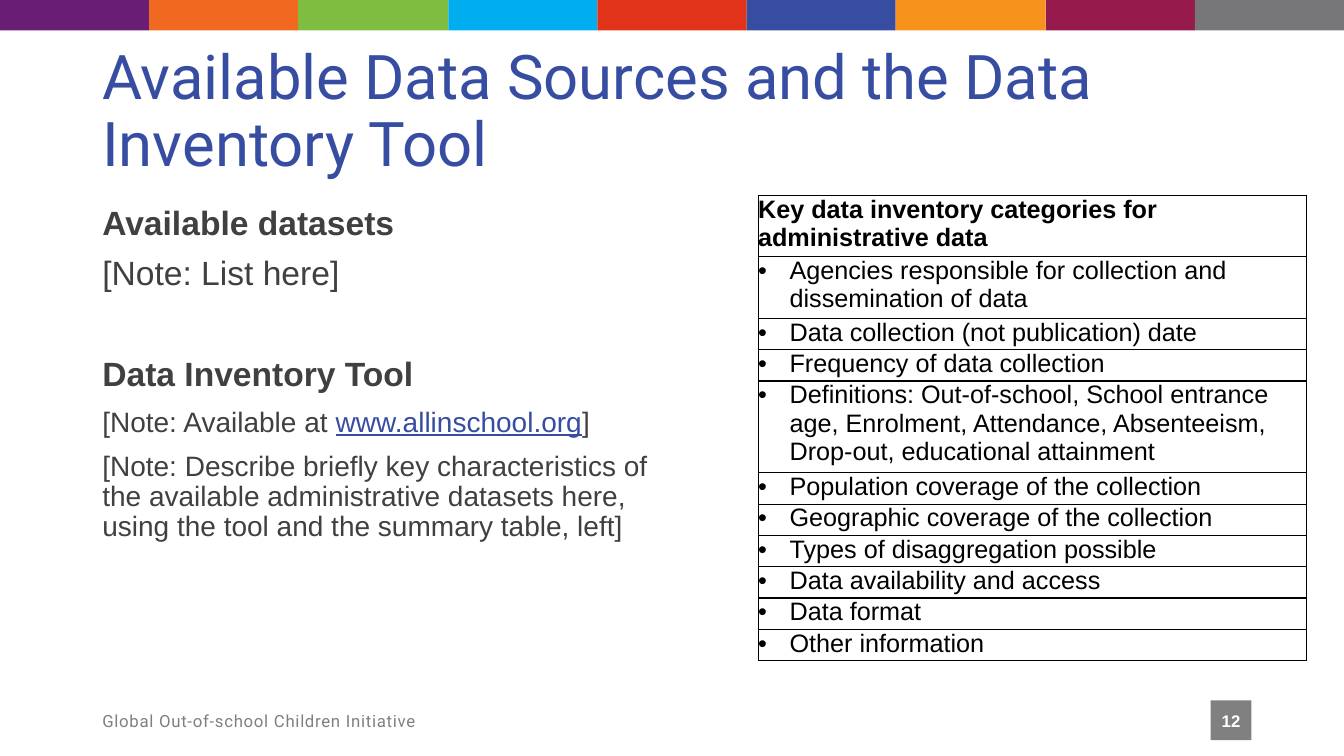
from dataclasses import dataclass
from typing import NamedTuple

from lxml import etree
from pptx import Presentation
from pptx.dml.color import RGBColor
from pptx.enum.shapes import MSO_SHAPE as Shape
from pptx.enum.text import MSO_ANCHOR as Anchor, PP_ALIGN as Align
from pptx.oxml.ns import qn
from pptx.util import Emu, Pt

EMU_PER_PX = 9525
SLIDE_WIDTH, SLIDE_HEIGHT = 1280, 720


@dataclass(frozen=True)
class Theme:
    heading_font: str = "Roboto"
    body_font: str = "Arial"
    blue: str = "364DA1"
    text: str = "404040"
    gray: str = "808080"
    black: str = "000000"
    white: str = "FFFFFF"
    band: tuple[str, ...] = ("691D74", "F16920", "7FBD41", "00AEEF", "E13319",
                             "364DA1", "F7931D", "961A4B", "77777A")
    title_size: int = 44
    heading_size: int = 24
    note_size: int = 20
    table_size: int = 18
    footer_size: int = 12


THEME = Theme()


class Box(NamedTuple):
    left: int
    top: int
    width: int
    height: int


@dataclass(frozen=True)
class Run:
    text: str
    size: int
    color: str = THEME.text
    font: str = THEME.body_font
    bold: bool = False
    underline: bool = False
    tracking: int = 0  # hundredths of a point


@dataclass(frozen=True)
class Block:
    runs: tuple[Run, ...]
    space_before: int = 0
    line_spacing: float = 0.9


class Category(NamedTuple):
    text: str
    lines: int = 1
    heading: bool = False


TITLE_BOX = Box(88, 38, 1157, 139)
BODY_BOX = Box(88, 192, 564, 457)
FOOTER_BOX = Box(88, 667, 768, 38)
NUMBER_BOX = Box(1153, 667, 39, 38)
TABLE_LEFT, TABLE_TOP, TABLE_WIDTH = 722, 186, 522
TABLE_LINE, BULLET_INDENT, BAND_HEIGHT = 28, 30, 29

TITLE = Block((Run("Available Data Sources and the Data Inventory Tool",
                   THEME.title_size, THEME.blue, THEME.heading_font),))
BODY = (
    Block((Run("Available datasets", THEME.heading_size, bold=True),)),
    Block((Run("[Note: List here]", THEME.heading_size),), 10),
    Block((Run("Data Inventory Tool", THEME.heading_size, bold=True),), 46),
    Block((Run("[Note: Available at ", THEME.note_size),
           Run("www.allinschool.org", THEME.note_size, THEME.blue, underline=True),
           Run("]", THEME.note_size)), 10),
    Block((Run("[Note: Describe briefly key characteristics of the available "
               "administrative datasets here, using the tool and the summary "
               "table, left]", THEME.note_size),), 10),
)
FOOTER = Block((Run("Global Out-of-school Children Initiative", THEME.footer_size,
                    THEME.gray, THEME.heading_font, tracking=50),), line_spacing=1.0)
NUMBER = Block((Run("12", THEME.footer_size, THEME.white, bold=True),), line_spacing=1.0)
CATEGORIES = (
    Category("Key data inventory categories for administrative data", 2, True),
    Category("Agencies responsible for collection and dissemination of data", 2),
    Category("Data collection (not publication) date"),
    Category("Frequency of data collection"),
    Category("Definitions: Out-of-school, School entrance age, Enrolment, Attendance, "
             "Absenteeism, Drop-out, educational attainment", 3),
    Category("Population coverage of the collection"),
    Category("Geographic coverage of the collection"),
    Category("Types of disaggregation possible"),
    Category("Data availability and access"),
    Category("Data format"),
    Category("Other information"),
)


def px(length: int) -> Emu:
    return Emu(length * EMU_PER_PX)


def place(box: Box) -> tuple[Emu, ...]:
    return tuple(px(length) for length in box)


def add_run(paragraph, style: Run) -> None:
    run = paragraph.add_run()
    run.text = style.text
    font = run.font
    font.name, font.size = style.font, Pt(style.size)
    font.bold, font.underline = style.bold, style.underline
    font.color.rgb = RGBColor.from_string(style.color)
    if style.tracking:
        run._r.get_or_add_rPr().set("spc", str(style.tracking))


def fill_frame(frame, blocks: tuple[Block, ...], anchor: Anchor = Anchor.TOP,
               align: Align = Align.LEFT) -> None:
    frame.word_wrap = True
    frame.vertical_anchor = anchor
    for index, block in enumerate(blocks):
        paragraph = frame.add_paragraph() if index else frame.paragraphs[0]
        paragraph.alignment = align
        paragraph.line_spacing = block.line_spacing
        if block.space_before:
            paragraph.space_before = Pt(block.space_before)
        for style in block.runs:
            add_run(paragraph, style)


def add_text(slide, box: Box, blocks: tuple[Block, ...], anchor: Anchor = Anchor.TOP) -> None:
    fill_frame(slide.shapes.add_textbox(*place(box)).text_frame, blocks, anchor)


def add_rectangle(slide, box: Box, color: str):
    shape = slide.shapes.add_shape(Shape.RECTANGLE, *place(box))
    shape.shadow.inherit = False
    shape.fill.solid()
    shape.fill.fore_color.rgb = RGBColor.from_string(color)
    shape.line.fill.background()
    return shape


def add_borders(cell, color: str) -> None:
    properties = cell._tc.get_or_add_tcPr()
    for side in ("lnL", "lnR", "lnT", "lnB"):
        line = etree.SubElement(properties, qn(f"a:{side}"), w=str(Pt(1)))
        fill = etree.SubElement(line, qn("a:solidFill"))
        etree.SubElement(fill, qn("a:srgbClr"), val=color)


def add_bullet(paragraph) -> None:
    properties = paragraph._p.get_or_add_pPr()
    properties.set("marL", str(px(BULLET_INDENT)))
    properties.set("indent", str(-px(BULLET_INDENT)))
    etree.SubElement(properties, qn("a:buFont"), typeface=THEME.body_font)
    etree.SubElement(properties, qn("a:buChar"), char="•")


def add_category_table(slide) -> None:
    height = TABLE_LINE * sum(category.lines for category in CATEGORIES)
    box = Box(TABLE_LEFT, TABLE_TOP, TABLE_WIDTH, height)
    table = slide.shapes.add_table(len(CATEGORIES), 1, *place(box)).table
    table.first_row = table.horz_banding = False
    for row, category in zip(table.rows, CATEGORIES):
        row.height = px(TABLE_LINE * category.lines)
        cell = row.cells[0]
        cell.margin_left = cell.margin_right = cell.margin_top = 0
        cell.margin_bottom = px(1)
        add_borders(cell, THEME.black)
        cell.fill.background()
        paragraph = cell.text_frame.paragraphs[0]
        if not category.heading:
            add_bullet(paragraph)
        add_run(paragraph, Run(category.text, THEME.table_size, THEME.black,
                               bold=category.heading))


def main() -> None:
    presentation = Presentation()
    presentation.slide_width, presentation.slide_height = px(SLIDE_WIDTH), px(SLIDE_HEIGHT)
    slide = presentation.slides.add_slide(presentation.slide_layouts[6])

    # Colour band
    edges = [round(SLIDE_WIDTH * step / len(THEME.band)) for step in range(len(THEME.band) + 1)]
    for left, right, color in zip(edges, edges[1:], THEME.band):
        add_rectangle(slide, Box(left, 0, right - left, BAND_HEIGHT), color)

    # Title and notes
    add_text(slide, TITLE_BOX, (TITLE,), Anchor.MIDDLE)
    add_text(slide, BODY_BOX, BODY)

    # Footer and slide number
    add_text(slide, FOOTER_BOX, (FOOTER,), Anchor.MIDDLE)
    number = add_rectangle(slide, NUMBER_BOX, THEME.gray).text_frame
    number.margin_left = number.margin_right = 0
    fill_frame(number, (NUMBER,), Anchor.MIDDLE, Align.CENTER)

    # Data inventory categories
    add_category_table(slide)
    presentation.save("out.pptx")


if __name__ == "__main__":
    main()
